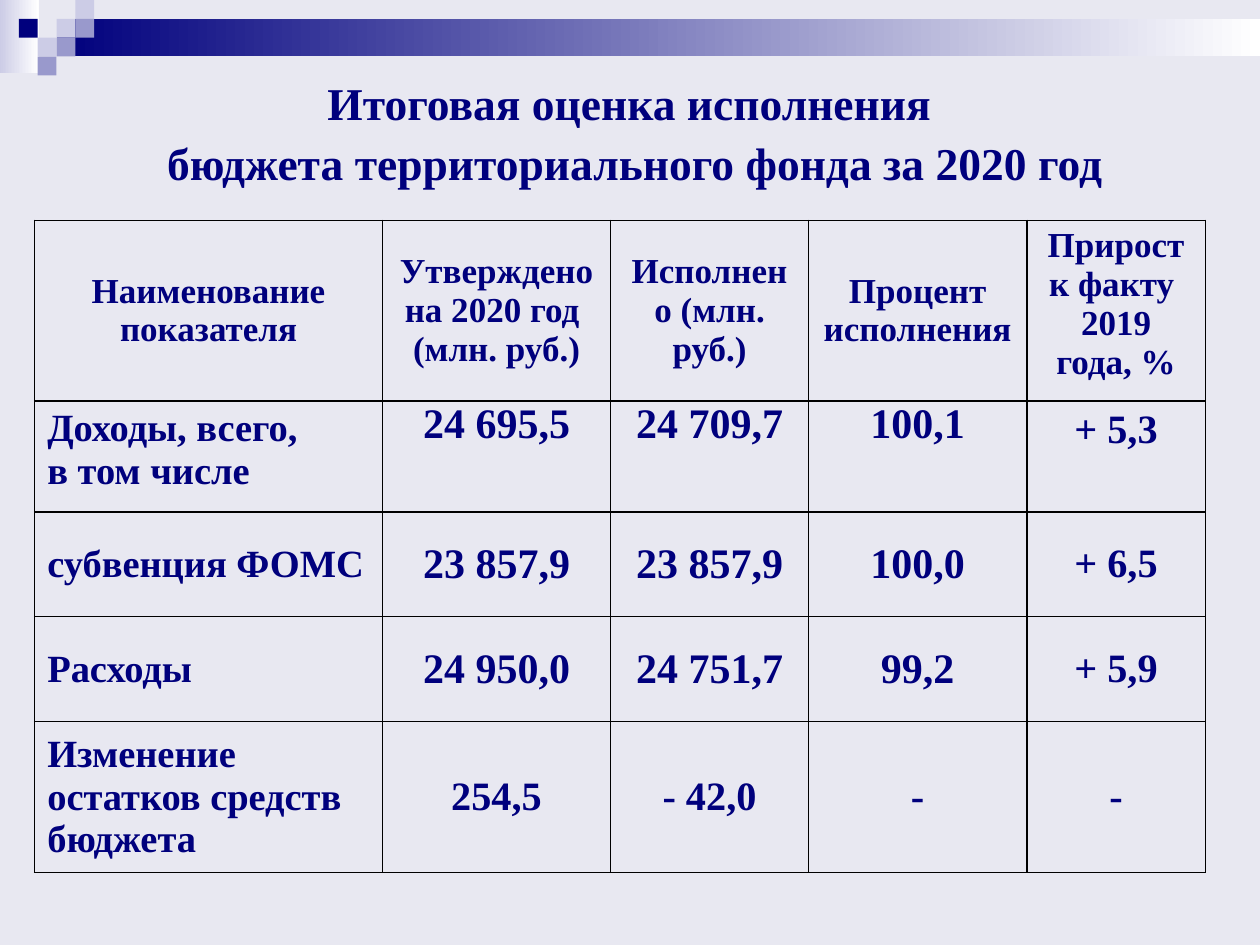
"""Build the slide with the 2020 budget execution table of the territorial fund."""
from lxml import etree
from pptx import Presentation
from pptx import util as u
from pptx.dml.color import RGBColor
from pptx.enum import shapes, text
from pptx.oxml import ns

NAVY = RGBColor(0x00, 0x00, 0x7D)
VIOLET = RGBColor(0x99, 0x99, 0xCC)
LILAC = RGBColor(0xCC, 0xCC, 0xE6)
WHITE = RGBColor(0xFF, 0xFF, 0xFF)
PAPER = RGBColor(0xE8, 0xE8, 0xF1)
BLACK = RGBColor(0x00, 0x00, 0x00)
CENTER, LEFT = text.PP_ALIGN.CENTER, text.PP_ALIGN.LEFT
TOP, MIDDLE = text.MSO_ANCHOR.TOP, text.MSO_ANCHOR.MIDDLE


def add_block(left, top, width, height, *colors):
    block = slide.shapes.add_shape(
        shapes.MSO_SHAPE.RECTANGLE, u.Cm(left), u.Cm(top), u.Cm(width), u.Cm(height))
    block.shadow.inherit = False
    block.line.fill.background()
    if len(colors) == 1:
        block.fill.solid()
        block.fill.fore_color.rgb = colors[0]
    else:
        block.fill.gradient()
        block.fill.gradient_angle = 0
        for stop, color in zip(block.fill.gradient_stops, colors):
            stop.color.rgb = color


def format_text(frame, size, align):
    for paragraph in frame.paragraphs:
        paragraph.alignment = align
        for run in paragraph.runs:
            run.font.name = "Times New Roman"
            run.font.size = u.Pt(size)
            run.font.bold = True
            run.font.color.rgb = NAVY


prs = Presentation()
prs.slide_width, prs.slide_height = u.Cm(25.4), u.Cm(19.05)
slide = prs.slides.add_slide(prs.slide_layouts[6])
slide.background.fill.solid()
slide.background.fill.fore_color.rgb = PAPER

add_block(0, 0, 0.78, 1.48, LILAC, WHITE)
add_block(1.14, 0.38, 24.26, 0.76, NAVY, WHITE)
square = 0.38
mosaic = [(3, 1, LILAC), (4, 0, LILAC), (4, 1, VIOLET), (2, 2, LILAC),
          (1, 1, NAVY), (3, 2, VIOLET), (2, 3, VIOLET)]
for column, row, color in mosaic:
    add_block(column * square, row * square, square, square, color)

title = slide.shapes.add_textbox(u.Cm(2.1), u.Cm(1.28), u.Cm(21.41), u.Cm(2.67)).text_frame
title.word_wrap = True
title.vertical_anchor = MIDDLE
title.text = "Итоговая оценка исполнения \vбюджета территориального фонда за 2020 год"
title.paragraphs[0].line_spacing = 1.1
format_text(title, 26, CENTER)

budget_rows = [
    ["Наименование показателя", "Утверждено на 2020 год \n(млн. руб.)",
     "Исполнено (млн. руб.)", "Процент исполнения", "Прирост к факту \n2019 года, %"],
    ["Доходы, всего, \nв том числе", "24 695,5", "24 709,7", "100,1", "+ 5,3"],
    ["субвенция ФОМС", "23 857,9", "23 857,9", "100,0", "+ 6,5"],
    ["Расходы", "24 950,0", "24 751,7", "99,2", "+ 5,9"],
    ["Изменение остатков средств бюджета", "254,5", "- 42,0", "-", "-"],
]
column_widths = [7.01, 4.6, 3.99, 4.4, 3.6]
row_heights = [3.64, 2.24, 2.11, 2.11, 3.05]
budget = slide.shapes.add_table(
    len(row_heights), len(column_widths), u.Cm(0.7), u.Cm(4.44),
    u.Cm(sum(column_widths)), u.Cm(sum(row_heights))).table
budget.first_row = budget.horz_banding = False
for column, width in zip(budget.columns, column_widths):
    column.width = u.Cm(width)
for row, height in zip(budget.rows, row_heights):
    row.height = u.Cm(height)

for r, entries in enumerate(budget_rows):
    for c, entry in enumerate(entries):
        cell = budget.cell(r, c)
        cell.text_frame.text = entry
        cell.vertical_anchor = TOP if r == 1 or (r, c) == (0, 4) else MIDDLE
        if r == 0:
            size = 20
        elif c == 0:
            size = 22
        elif c == 4 or r == 4:
            size = 23
        else:
            size = 24
            cell.margin_left = cell.margin_right = u.Cm(0.13)
            cell.margin_top = cell.margin_bottom = 0
        format_text(cell.text_frame, size, LEFT if r and c == 0 else CENTER)
        cell.fill.background()
        properties = cell._tc.get_or_add_tcPr()
        for i, side in enumerate(["a:lnL", "a:lnR", "a:lnT", "a:lnB"]):
            border = etree.Element(ns.qn(side), w=str(u.Pt(1)))
            solid = etree.SubElement(border, ns.qn("a:solidFill"))
            etree.SubElement(solid, ns.qn("a:srgbClr"), val=str(BLACK))
            properties.insert(i, border)

prs.save("out.pptx")
